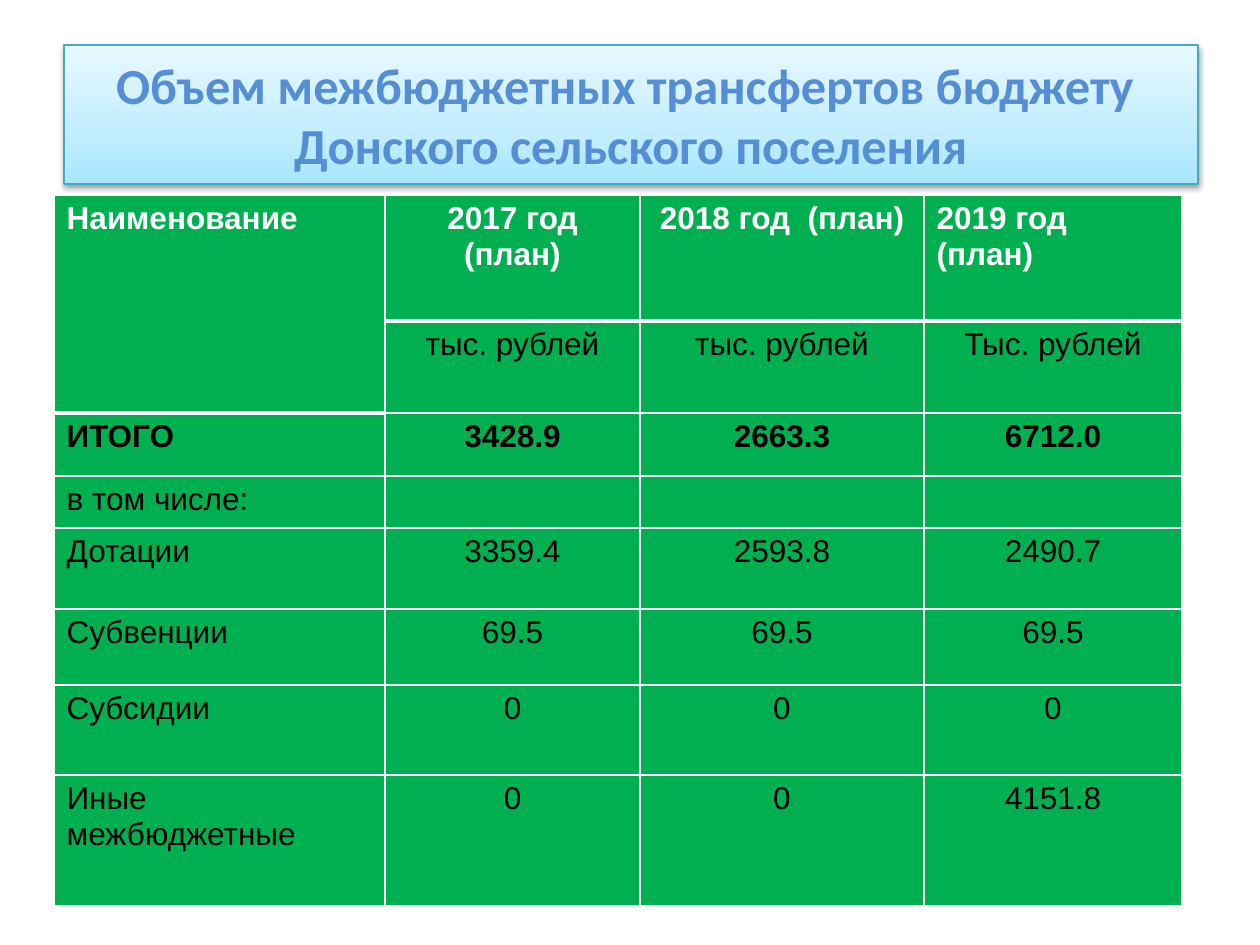
import copy

import pptx
import pptx.dml.color
import pptx.enum.text
import pptx.oxml.ns
import pptx.util
from lxml import etree

RGBColor = pptx.dml.color.RGBColor
Pt = pptx.util.Pt
ALIGN = pptx.enum.text.PP_ALIGN
qn = pptx.oxml.ns.qn

WHITE = RGBColor(0xFF, 0xFF, 0xFF)
BLACK = RGBColor(0x00, 0x00, 0x00)
GREEN = RGBColor(0x00, 0xB0, 0x50)
TITLE_BLUE = RGBColor(0x55, 0x8E, 0xD5)
TITLE_LINE = RGBColor(0x46, 0xAA, 0xC5)
TITLE_STOPS = [(0, RGBColor(0xA7, 0xE6, 0xFF)),
               (0.35, RGBColor(0xC1, 0xED, 0xFF)),
               (1, RGBColor(0xE7, 0xF8, 0xFF))]


def px(n):
    return round(n * 914400 / 126)


def add_border(cell, side, width):
    ln = etree.SubElement(cell._tc.get_or_add_tcPr(), qn("a:ln" + side), w=str(Pt(width)))
    fill = etree.SubElement(ln, qn("a:solidFill"))
    etree.SubElement(fill, qn("a:srgbClr"), val=str(WHITE))


prs = pptx.Presentation()
prs.slide_width, prs.slide_height = px(1260), px(945)
s = prs.slides.add_slide(prs.slide_layouts[5])

# Title box: gradient running upwards, thin outline
sp = s.shapes.title
sp.left, sp.top, sp.width, sp.height = px(64), px(45), px(1134), px(139)
sp.fill.gradient()
sp.fill.gradient_angle = 90
gs_list = sp._element.spPr.find(".//" + qn("a:gsLst"))
gs_list.insert(1, copy.deepcopy(gs_list[0]))
for stop, (position, color) in zip(sp.fill.gradient_stops, TITLE_STOPS):
    stop.position = position
    stop.color.rgb = color
sp.line.color.rgb = TITLE_LINE
sp.line.width = Pt(0.75)

# Title shadow
effects = etree.SubElement(sp._element.spPr, qn("a:effectLst"))
shadow = etree.SubElement(effects, qn("a:outerShdw"), blurRad="40000", dist="20000",
                          dir="5400000", rotWithShape="0")
shade = etree.SubElement(shadow, qn("a:srgbClr"), val=str(BLACK))
etree.SubElement(shade, qn("a:alpha"), val="38000")

# Title text
tf = sp.text_frame
tf.word_wrap = True
tf.auto_size = pptx.enum.text.MSO_AUTO_SIZE.NONE
tf.vertical_anchor = pptx.enum.text.MSO_ANCHOR.MIDDLE
p = tf.paragraphs[0]
p.alignment = ALIGN.CENTER
r = p.add_run()
r.text = "Объем межбюджетных трансфертов бюджету  Донского сельского поселения"
r.font.name = "Calibri"
r.font.size = Pt(28.8)
r.font.bold = True
r.font.color.rgb = TITLE_BLUE

# Transfers table
rows = [
    ["Наименование", "2017 год (план)", "2018 год  (план)", "2019 год (план)"],
    ["", "тыс. рублей", "тыс. рублей", "Тыс. рублей"],
    ["ИТОГО", "3428.9", "2663.3", "6712.0"],
    ["в том числе:", "", "", ""],
    ["Дотации", "3359.4", "2593.8", "2490.7"],
    ["Субвенции", "69.5", "69.5", "69.5"],
    ["Субсидии", "0", "0", "0"],
    ["Иные межбюджетные", "0", "0", "4151.8"],
]
col_widths = [331, 255, 284, 258]
row_heights = [126, 92, 63, 52, 81, 76, 90, 131]
HEADER, TOTAL = 0, 2

table = s.shapes.add_table(len(rows), len(col_widths), px(54), px(195),
                           px(sum(col_widths)), px(sum(row_heights))).table
for column, width in zip(table.columns, col_widths):
    column.width = px(width)
for row, height in zip(table.rows, row_heights):
    row.height = px(height)
table.cell(0, 0).merge(table.cell(1, 0))

for i, values in enumerate(rows):
    for j, text in enumerate(values):
        cell = table.cell(i, j)
        # The heavy rule runs under the header, one row lower in the merged column
        heavy_row = 1 if j == 0 else 0
        for side in "LR":
            add_border(cell, side, 1)
        add_border(cell, "T", 3 if i == heavy_row + 1 else 1)
        add_border(cell, "B", 3 if i == heavy_row or cell.is_merge_origin else 1)
        cell.fill.solid()
        cell.fill.fore_color.rgb = GREEN
        if not text:
            continue
        p = cell.text_frame.paragraphs[0]
        left = j == 0 or (i, j) == (HEADER, 3)
        p.alignment = ALIGN.LEFT if left else ALIGN.CENTER
        r = p.add_run()
        r.text = text
        r.font.name = "Arial"
        r.font.size = Pt(18)
        r.font.bold = i in (HEADER, TOTAL)
        r.font.color.rgb = WHITE if i == HEADER else BLACK

prs.save("out.pptx")
